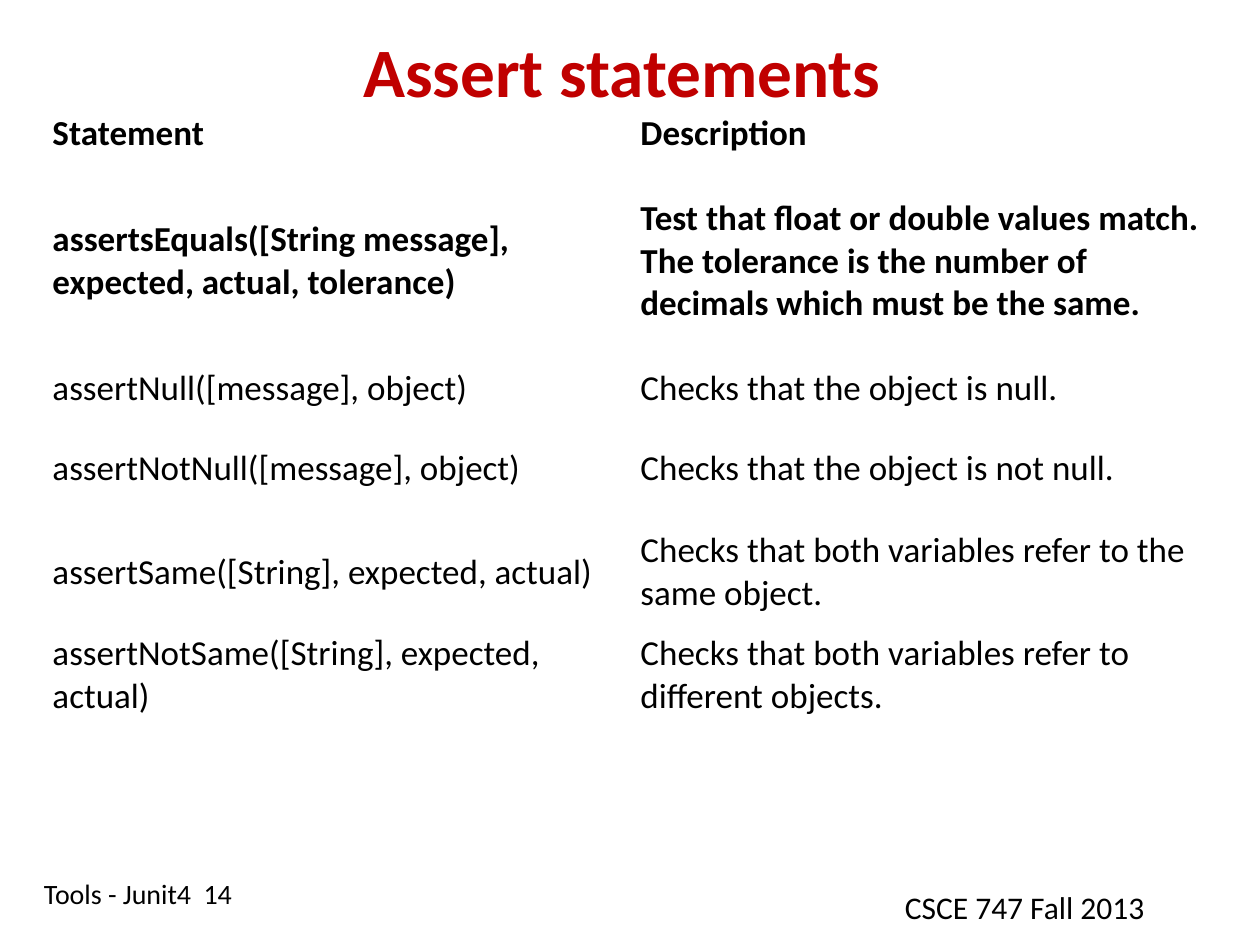
"""Build the slide listing the JUnit assert statements."""
from pptx import Presentation
from pptx.dml.color import RGBColor
from pptx.enum import text
from pptx.util import Pt

BLACK = RGBColor(0, 0, 0)
RED = RGBColor(0xC0, 0, 0)

ROWS = [
    ("Statement", "Description", 33),
    ("assertsEquals([String message], expected, actual, tolerance)",
     "Test that float or double values match. The tolerance is the number of "
     "decimals which must be the same.", 112.5),
    ("assertNull([message], object)", "Checks that the object is null.", 33),
    ("assertNotNull([message], object)", "Checks that the object is not null.", 59),
    ("assertSame([String], expected, actual)",
     "Checks that both variables refer to the same object.", 59),
    ("assertNotSame([String], expected, actual)",
     "Checks that both variables refer to different objects.", 59),
]
BOLD_ROWS = 2


def write(tf, words, size, color=BLACK, bold=False):
    tf.text = words
    f = tf.paragraphs[0].runs[0].font
    f.name, f.size, f.bold = "Calibri", Pt(size), bold
    f.color.rgb = color


prs = Presentation()
prs.slide_width, prs.slide_height = Pt(720), Pt(540)
s = prs.slides.add_slide(prs.slide_layouts[6])

footers = [
    ("Tools - Junit4  14", 16, 18, 497.5, 126, 26.6),
    ("CSCE 747 Fall 2013", 18, 510, 504, 153, 29),
]
for words, size, left, top, width, height in footers:
    sp = s.shapes.add_textbox(Pt(left), Pt(top), Pt(width), Pt(height))
    write(sp.text_frame, words, size)
    sp.text_frame.word_wrap = False
    sp.text_frame.auto_size = text.MSO_AUTO_SIZE.SHAPE_TO_FIT_TEXT

sp = s.shapes.add_textbox(Pt(36), Pt(12), Pt(648), Pt(56))
tf = sp.text_frame
tf.word_wrap = True
tf.vertical_anchor = text.MSO_ANCHOR.MIDDLE
write(tf, "Assert statements ", 39.6, RED, True)
tf.paragraphs[0].alignment = text.PP_ALIGN.CENTER

height = sum(row[2] for row in ROWS)
table = s.shapes.add_table(len(ROWS), 2, Pt(24), Pt(60), Pt(672), Pt(height)).table
table.first_row = table.horz_banding = False
for i, (statement, description, row_height) in enumerate(ROWS):
    table.rows[i].height = Pt(row_height)
    for j, words in enumerate((statement, description)):
        cell = table.cell(i, j)
        cell.fill.background()
        cell.vertical_anchor = text.MSO_ANCHOR.MIDDLE
        cell.margin_left = cell.margin_right = Pt(6)
        cell.margin_top = cell.margin_bottom = Pt(3)
        write(cell.text_frame, words, 20, bold=i < BOLD_ROWS)

prs.save("out.pptx")
